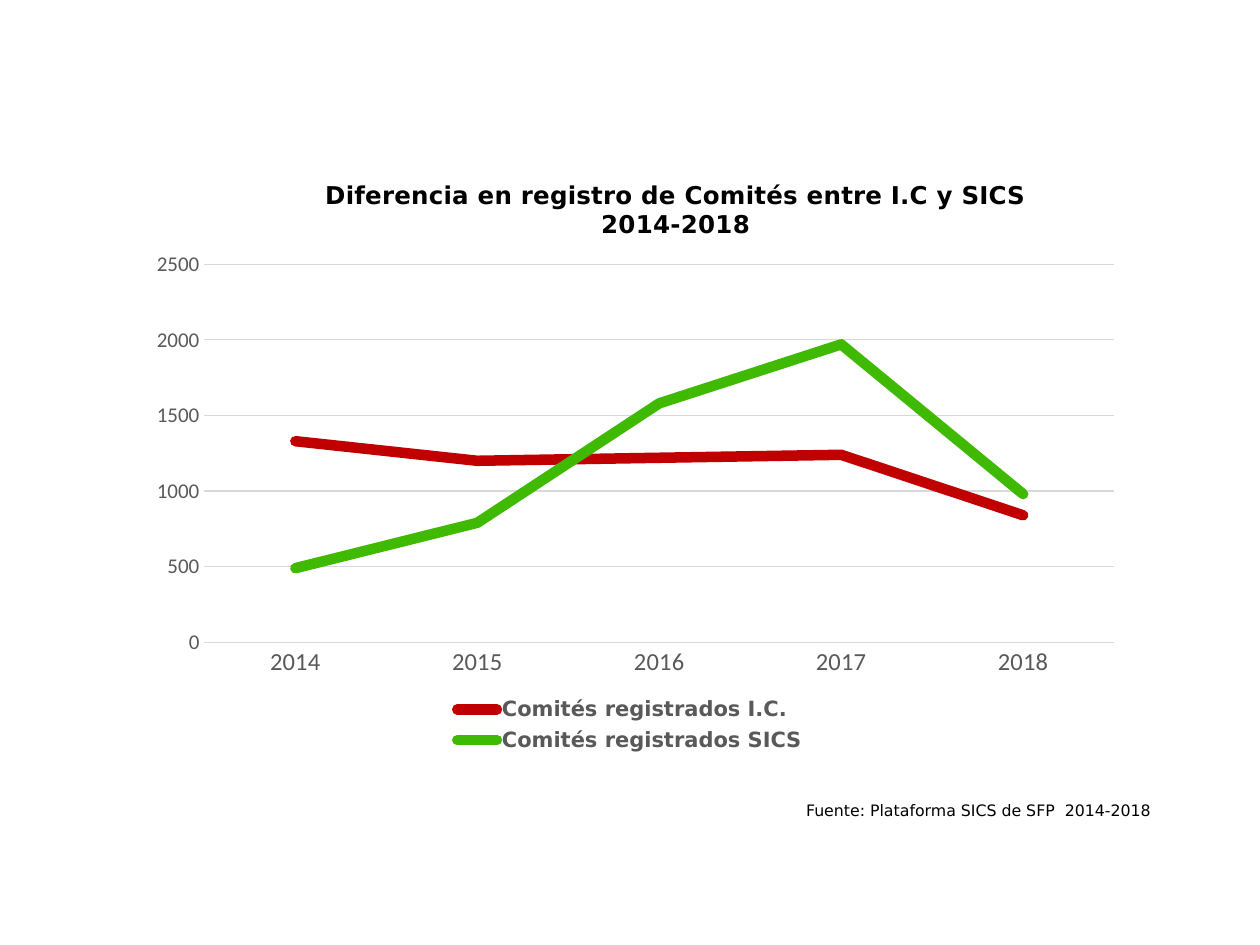
from lxml import etree
from pptx import Presentation
from pptx.chart.data import CategoryChartData
from pptx.dml.color import RGBColor
from pptx.enum.chart import XL_CHART_TYPE, XL_LEGEND_POSITION, XL_TICK_MARK
from pptx.enum.text import PP_ALIGN
from pptx.oxml.ns import qn
from pptx.util import Inches, Pt

TEXT_FACE, AXIS_FACE = "DejaVu Sans", "Calibri"
BLACK, GRAY, GRID = "000000", "595959", "D9D9D9"
YEARS = ["2014", "2015", "2016", "2017", "2018"]
COMMITTEES = [
    ("Comités registrados I.C.", [1330, 1200, 1220, 1240, 840], "C00000"),
    ("Comités registrados SICS", [490, 790, 1580, 1970, 980], "40B903"),
]
TITLE_LINES = ["Diferencia en registro de Comités entre I.C y SICS", "2014-2018"]
SOURCE = "Fuente: Plataforma SICS de SFP  2014-2018"


def rgb(value):
    return RGBColor.from_string(value)


def set_font(font, size, color, face, bold=False):
    font.size, font.name, font.bold = Pt(size), face, bold
    font.color.rgb = rgb(color)


def set_line(line, color, width):
    line.color.rgb = rgb(color)
    line.width = Pt(width)


def place(part, after=None, inner=False, **shares):
    """Fix a chart part at shares of the chart's size."""
    for old in part.findall(qn("c:layout")):
        part.remove(old)
    layout = etree.Element(qn("c:layout"))
    manual = etree.SubElement(layout, qn("c:manualLayout"))
    settings = {"layoutTarget": "inner"} if inner else {}
    settings |= {"xMode": "edge", "yMode": "edge"} | shares
    for tag, value in settings.items():
        etree.SubElement(manual, qn(f"c:{tag}")).set("val", str(value))
    if after:
        part.find(qn(after)).addnext(layout)
    else:
        part.insert(0, layout)


def style_title(chart):
    frame = chart.chart_title.text_frame
    for index, text in enumerate(TITLE_LINES):
        paragraph = frame.add_paragraph() if index else frame.paragraphs[0]
        paragraph.text = text
        paragraph.alignment = PP_ALIGN.CENTER
        set_font(paragraph.font, 14, BLACK, TEXT_FACE, True)
    chart.chart_title.include_in_layout = False
    place(chart.chart_title._element, after="c:tx", x=0.21, y=0.04)


def style_axes(chart):
    years, counts = chart.category_axis, chart.value_axis
    for axis, size in ((years, 14), (counts, 12)):
        axis.major_tick_mark = axis.minor_tick_mark = XL_TICK_MARK.NONE
        set_font(axis.tick_labels.font, size, GRAY, AXIS_FACE)
    set_line(years.format.line, GRID, 0.75)
    counts.format.line.fill.background()
    set_line(counts.major_gridlines.format.line, GRID, 0.75)
    counts.minimum_scale, counts.maximum_scale, counts.major_unit = 0, 2500, 500


def style_legend(chart):
    chart.has_legend = True
    chart.legend.position = XL_LEGEND_POSITION.BOTTOM
    chart.legend.include_in_layout = False
    set_font(chart.legend.font, 12, GRAY, TEXT_FACE, True)
    place(chart.legend._element, after="c:legendPos", x=0.33, y=0.88, w=0.35, h=0.11)


def add_committee_chart(slide, box):
    data = CategoryChartData()
    data.categories = YEARS
    for name, counts, _ in COMMITTEES:
        data.add_series(name, counts)
    chart = slide.shapes.add_chart(XL_CHART_TYPE.LINE, *box, data).chart
    set_font(chart.font, 10, BLACK, AXIS_FACE)
    chart.plots[0].vary_by_categories = False
    for series, (_, _, color) in zip(chart.plots[0].series, COMMITTEES):
        series.smooth = False
        set_line(series.format.line, color, 6)
        series.format.line._get_or_add_ln().set("cap", "rnd")
    style_title(chart)
    style_axes(chart)
    style_legend(chart)
    plot_area = chart._chartSpace.find(f".//{qn('c:plotArea')}")
    place(plot_area, inner=True, x=0.098, y=0.186, w=0.871, h=0.615)


def add_source(slide, box):
    frame = slide.shapes.add_textbox(*box).text_frame
    frame.word_wrap = True
    paragraph = frame.paragraphs[0]
    paragraph.text = SOURCE
    paragraph.alignment = PP_ALIGN.RIGHT
    set_font(paragraph.font, 9, BLACK, TEXT_FACE)


def main():
    deck = Presentation()
    deck.slide_width, deck.slide_height = Inches(10), Inches(7.5)

    def share(left, top, width, height):
        """Turn percentages of the slide into a box."""
        across, down = deck.slide_width / 100, deck.slide_height / 100
        return [int(n) for n in (left * across, top * down, width * across, height * down)]

    slide = deck.slides.add_slide(deck.slide_layouts[6])
    add_committee_chart(slide, share(8.1, 15.87, 82.9, 65.07))
    add_source(slide, share(7.6, 84.13, 84.7, 3.33))
    deck.save("out.pptx")


if __name__ == "__main__":
    main()
